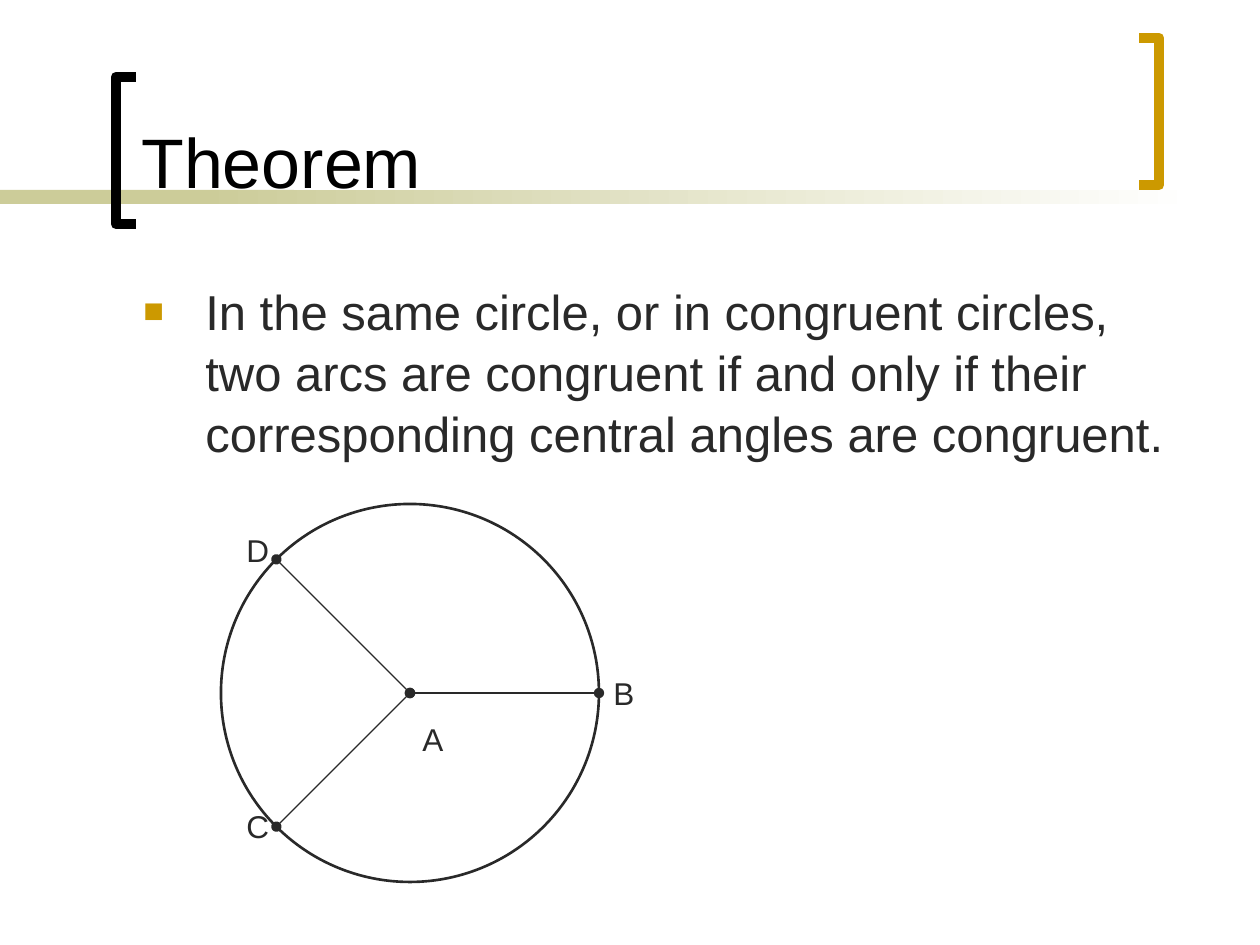
import math

import pptx
import pptx.dml.color
import pptx.enum.shapes
import pptx.enum.text
import pptx.oxml.ns
import pptx.util
from lxml import etree

PX_PER_INCH = 126
BLACK, INK, GOLD, OLIVE, WHITE = "000000", "292929", "CC9900", "CCCC99", "FFFFFF"


def px(length):
    return pptx.util.Emu(round(length * 914400 / PX_PER_INCH))


def color(code):
    return pptx.dml.color.RGBColor.from_string(code)


def add_xml(parent, tag, **attributes):
    return etree.SubElement(parent, pptx.oxml.ns.qn(tag), attributes)


class Board:
    font = "Arial"

    def __init__(self, slide):
        self.slide = slide

    def stroke(self, shape, code, width):
        shape.line.color.rgb = color(code)
        shape.line.width = pptx.util.Pt(width)

    def band(self, left, top, width, height, start, end=None):
        band = self.slide.shapes.add_shape(
            pptx.enum.shapes.MSO_SHAPE.RECTANGLE, px(left), px(top), px(width), px(height))
        band.shadow.inherit = False
        band.line.fill.background()
        if end is None:
            band.fill.solid()
            band.fill.fore_color.rgb = color(start)
        else:
            band.fill.gradient()
            band.fill.gradient_angle = 0
            for stop, code in zip(band.fill.gradient_stops, (start, end)):
                stop.color.rgb = color(code)

    def bracket(self, spine, tip, top, bottom, code):
        outline = self.slide.shapes.build_freeform(px(tip), px(top), scale=1.0)
        corners = [(spine, top), (spine, bottom), (tip, bottom)]
        outline.add_line_segments([(px(x), px(y)) for x, y in corners], close=False)
        bracket = outline.convert_to_shape()
        bracket.shadow.inherit = False
        bracket.fill.background()
        self.stroke(bracket, code, 6)

    def circle(self, x, y, radius):
        circle = self.slide.shapes.add_shape(
            pptx.enum.shapes.MSO_SHAPE.OVAL,
            px(x - radius), px(y - radius), px(2 * radius), px(2 * radius))
        circle.shadow.inherit = False
        circle.fill.background()
        self.stroke(circle, INK, 1.5)

    def radius_line(self, x1, y1, x2, y2):
        radius = self.slide.shapes.add_connector(
            pptx.enum.shapes.MSO_CONNECTOR.STRAIGHT, px(x1), px(y1), px(x2), px(y2))
        self.stroke(radius, INK, 0.75)
        line = radius.line._get_or_add_ln()
        add_xml(line, "a:headEnd", type="oval")
        add_xml(line, "a:tailEnd", type="oval")
        add_xml(radius._element.spPr, "a:effectLst")

    def text(self, words, left, top, width, height, size, code=INK, anchor="TOP"):
        frame = self.slide.shapes.add_textbox(
            px(left), px(top), px(width), px(height)).text_frame
        frame.word_wrap = True
        frame.vertical_anchor = pptx.enum.text.MSO_ANCHOR[anchor]
        paragraph = frame.paragraphs[0]
        run = paragraph.add_run()
        run.text = words
        run.font.name = self.font
        run.font.size = pptx.util.Pt(size)
        run.font.color.rgb = color(code)
        return paragraph

    def bullet(self, words, left, top, width, height, size):
        paragraph = self.text(words, left, top, width, height, size)
        paragraph.line_spacing = 1.04
        properties = paragraph._p.get_or_add_pPr()
        indent = px(62)
        properties.set("marL", str(indent))
        properties.set("indent", str(-indent))
        add_xml(add_xml(properties, "a:buClr"), "a:srgbClr", val=GOLD)
        add_xml(properties, "a:buSzPct", val="70000")
        add_xml(properties, "a:buFont", typeface=self.font)
        add_xml(properties, "a:buChar", char="■")


def main():
    deck = pptx.Presentation()
    deck.slide_width, deck.slide_height = px(1260), px(945)
    board = Board(deck.slides.add_slide(deck.slide_layouts[6]))

    board.band(0, 190, 294, 14, OLIVE)
    board.band(199, 190, 998, 14, OLIVE, WHITE)
    board.bracket(116, 136, 77, 224, BLACK)
    board.bracket(1159, 1139, 38, 185, GOLD)

    board.text("Theorem", 129, 14, 987, 195, 40, BLACK, "BOTTOM")
    board.bullet(
        "In the same circle, or in congruent circles, two arcs are congruent "
        "if and only if their corresponding central angles are congruent.",
        131, 273, 1056, 179, 28)

    center_x, center_y, radius = 410, 693, 189
    board.circle(center_x, center_y, radius)
    for degrees in (0, 135, 225):
        angle = math.radians(degrees)
        board.radius_line(center_x, center_y,
                          center_x + radius * math.cos(angle),
                          center_y - radius * math.sin(angle))
    for name, left, top in (("A", 410, 714), ("B", 601, 668),
                            ("C", 234, 801), ("D", 234, 525)):
        board.text(name, left, top, 84, 50, 18)

    deck.save("out.pptx")


if __name__ == "__main__":
    main()
